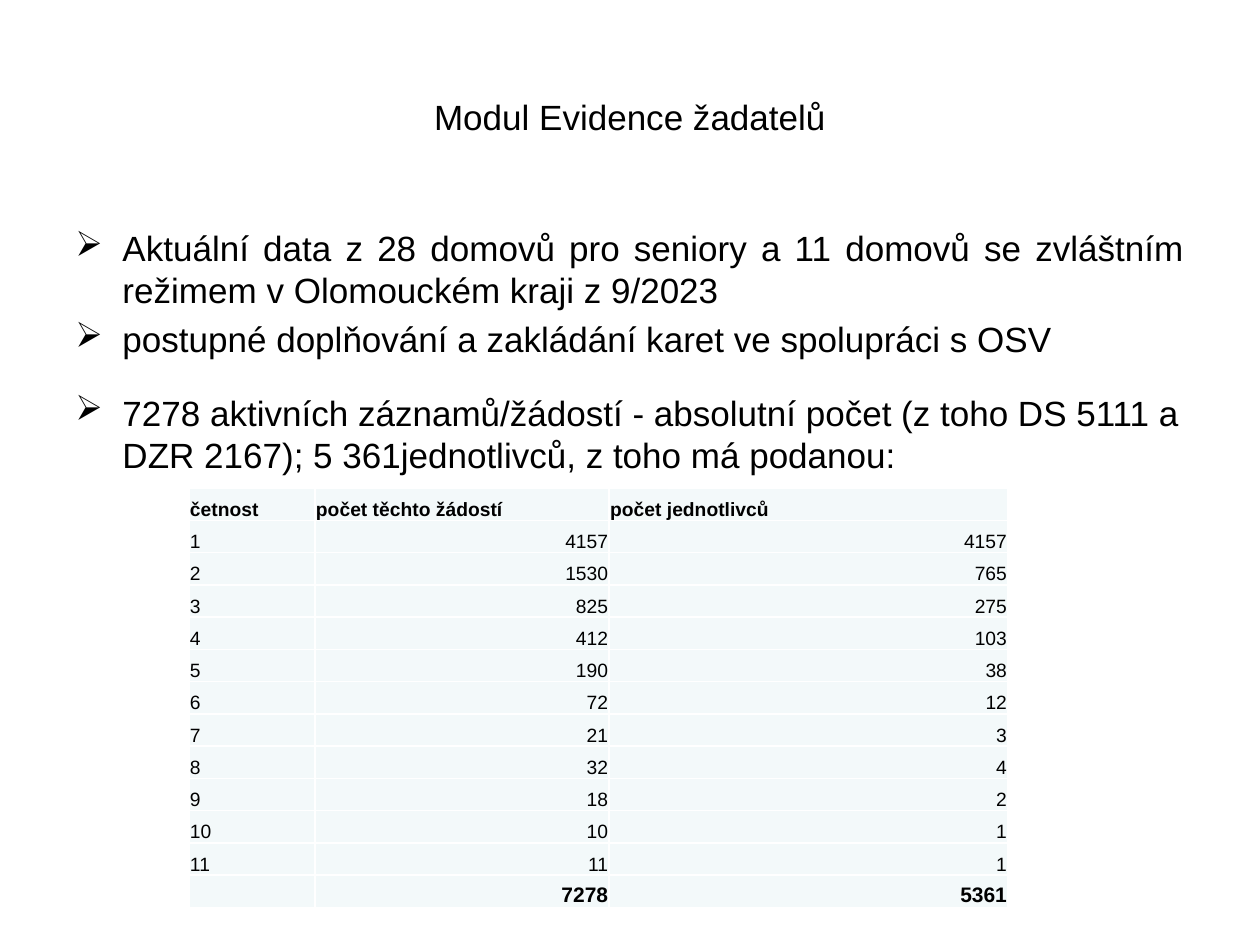
from lxml.etree import SubElement
from pptx import Presentation
from pptx.dml.color import RGBColor
from pptx.enum.text import MSO_ANCHOR as Anchor, PP_ALIGN as Align
from pptx.oxml.ns import qn
from pptx.util import Cm, Pt

COLORS = {"text": "000000", "cell": "F3F9FA", "border": "FFFFFF"}
FONT = "Arial"


def write(paragraph, text, size=20, bold=False, align=Align.LEFT, before=0, bullet=None):
    paragraph.alignment = align
    if before:
        paragraph.space_before = Pt(before)
    if bullet:
        properties = paragraph._p.get_or_add_pPr()
        properties.set("marL", str(Cm(0.95)))
        properties.set("indent", str(-Cm(0.95)))
        SubElement(properties, qn("a:buChar"), char=bullet)
    if not text:
        # An empty paragraph takes its height from the end mark.
        SubElement(paragraph._p, qn("a:endParaRPr"), sz=str(size * 100))
        return
    run = paragraph.add_run()
    run.text = text
    run.font.name = FONT
    run.font.size = Pt(size)
    run.font.bold = bold
    run.font.color.rgb = RGBColor.from_string(COLORS["text"])


def add_borders(cell, color, width):
    properties = cell._tc.get_or_add_tcPr()
    for side in ("lnL", "lnR", "lnT", "lnB"):
        line = SubElement(properties, qn(f"a:{side}"), w=str(width))
        fill = SubElement(line, qn("a:solidFill"))
        SubElement(fill, qn("a:srgbClr"), val=color)


presentation = Presentation()
presentation.slide_width = Cm(25.4)
presentation.slide_height = Cm(19.05)
slide = presentation.slides.add_slide(presentation.slide_layouts[6])

# Title
title = slide.shapes.add_textbox(Cm(1.27), Cm(0.76), Cm(22.86), Cm(3.18)).text_frame
title.word_wrap = True
title.vertical_anchor = Anchor.MIDDLE
write(title.paragraphs[0], "Modul Evidence žadatelů", align=Align.CENTER)

# Bullet list: text, alignment, space before
points = [
    ("Aktuální data z 28 domovů pro seniory a 11 domovů se zvláštním režimem "
     "v Olomouckém kraji z 9/2023", Align.JUSTIFY, 0),
    ("postupné doplňování a zakládání karet ve spolupráci s OSV", Align.JUSTIFY, 4),
    ("7278 aktivních záznamů/žádostí - absolutní počet (z toho DS 5111 a DZR 2167); "
     "5 361jednotlivců, z toho má podanou:", Align.LEFT, 18),
]
body = slide.shapes.add_textbox(Cm(1.27), Cm(4.45), Cm(22.86), Cm(12.57)).text_frame
body.word_wrap = True
for index, (text, align, before) in enumerate(points):
    paragraph = body.add_paragraph() if index else body.paragraphs[0]
    write(paragraph, text, align=align, before=before, bullet="➢")

# Table of applications by frequency
rows = [
    ("četnost", "počet těchto žádostí", "počet jednotlivců"),
    ("1", "4157", "4157"),
    ("2", "1530", "765"),
    ("3", "825", "275"),
    ("4", "412", "103"),
    ("5", "190", "38"),
    ("6", "72", "12"),
    ("7", "21", "3"),
    ("8", "32", "4"),
    ("9", "18", "2"),
    ("10", "10", "1"),
    ("11", "11", "1"),
    ("", "7278", "5361"),
]
column_widths = [2.54, 5.93, 8.04]
row_height = 0.65
last = len(rows) - 1
table = slide.shapes.add_table(
    len(rows), len(column_widths), Cm(3.81), Cm(9.84),
    Cm(sum(column_widths)), Cm(row_height * len(rows))).table
for column, width in zip(table.columns, column_widths):
    column.width = Cm(width)
for r, values in enumerate(rows):
    table.rows[r].height = Cm(row_height)
    for c, value in enumerate(values):
        cell = table.cell(r, c)
        cell.margin_left = cell.margin_right = cell.margin_top = Cm(0.02)
        cell.margin_bottom = 0
        cell.vertical_anchor = Anchor.BOTTOM
        add_borders(cell, COLORS["border"], Pt(1))
        cell.fill.solid()
        cell.fill.fore_color.rgb = RGBColor.from_string(COLORS["cell"])
        write(cell.text_frame.paragraphs[0], value,
              size=12 if r == last else 11,
              bold=r in (0, last),
              align=Align.RIGHT if r and c else Align.LEFT)

presentation.save("out.pptx")
